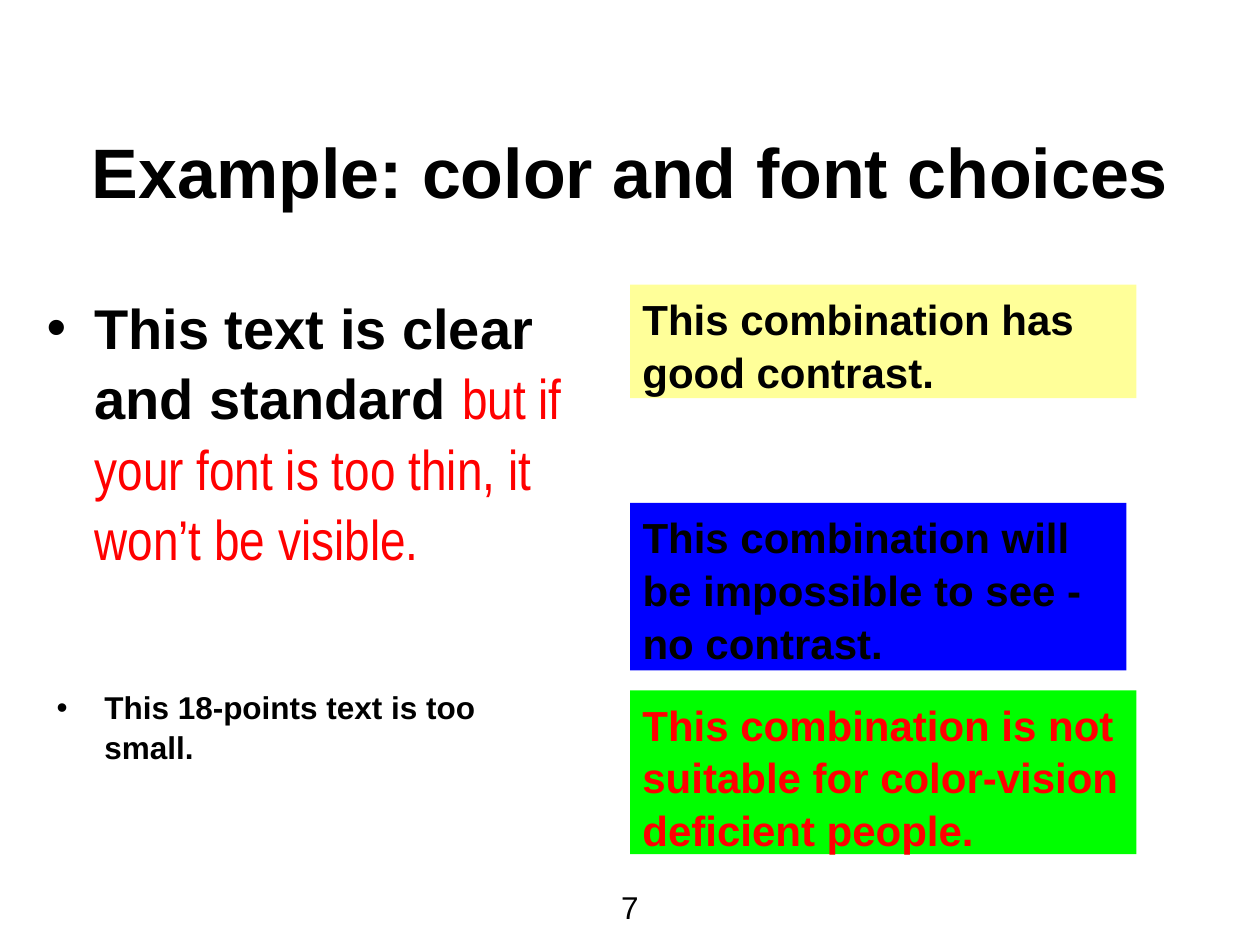
from pptx import Presentation
from pptx.dml.color import RGBColor
from pptx.enum.text import MSO_ANCHOR, MSO_AUTO_SIZE, PP_ALIGN
from pptx.util import Inches, Pt
from lxml import etree

CENTER, LEFT = PP_ALIGN.CENTER, PP_ALIGN.LEFT
TOP, MIDDLE = MSO_ANCHOR.TOP, MSO_ANCHOR.MIDDLE
NO_FIT = MSO_AUTO_SIZE.NONE
BLACK = RGBColor(0x00, 0x00, 0x00)
RED = RGBColor(0xFF, 0x00, 0x00)
BLUE = RGBColor(0x00, 0x00, 0xFF)
GREEN = RGBColor(0x00, 0xFF, 0x00)
YELLOW = RGBColor(0xFF, 0xFF, 0x99)
DRAWING = "{http://schemas.openxmlformats.org/drawingml/2006/main}"


def place(box, left, top, width, height, anchor=TOP):
    box.left, box.top = Inches(left), Inches(top)
    box.width, box.height = Inches(width), Inches(height)
    frame = box.text_frame
    frame.word_wrap = True
    frame.auto_size = NO_FIT
    frame.vertical_anchor = anchor


def write(box, text, size, color=BLACK, bold=True, align=LEFT, bullet=False):
    para = box.text_frame.paragraphs[0]
    para.text = text
    para.alignment = align
    para.space_before = Pt(0)
    para.line_spacing = 1.05
    properties = para._p.get_or_add_pPr()
    indent = Inches(0.38) if bullet else 0
    properties.set("marL", str(indent))
    properties.set("indent", str(-indent))
    if bullet:
        etree.SubElement(properties, DRAWING + "buFont", typeface="Arial")
        etree.SubElement(properties, DRAWING + "buChar", char="•")
    else:
        etree.SubElement(properties, DRAWING + "buNone")
    font = para.font
    font.name, font.size, font.bold = "Arial", Pt(size), bold
    font.color.rgb = color
    return para


deck = Presentation()
deck.slide_width, deck.slide_height = Inches(10), Inches(7.5)
page = deck.slides.add_slide(deck.slide_layouts[3])
title, clear_text, hidden_text = page.placeholders

place(title, 0, 0.92, 10, 0.83, MIDDLE)
write(title, "Example: color and font choices", 40, align=CENTER)

place(clear_text, 0.27, 2.25, 4.49, 2.52)
para = write(clear_text, "This text is clear and standard ", 32, bullet=True)
span = para.add_run()
span.text = "but if your font is too thin, it won’t be visible."
span.font.name, span.font.bold = "Arial Narrow", False
span.font.color.rgb = RED

small_text = page.shapes.add_textbox(0, 0, 0, 0)
place(small_text, 0.35, 5.4, 3.62, 0.47)
write(small_text, "This 18-points text is too small.", 18, bullet=True)

good_text = page.shapes.add_textbox(0, 0, 0, 0)
unsuitable_text = page.shapes.add_textbox(0, 0, 0, 0)
samples = [
    (good_text, 2.26, 4.02, 0.9, YELLOW, BLACK,
     "This combination has good contrast."),
    (hidden_text, 3.99, 3.94, 1.33, BLUE, BLACK,
     "This combination will be impossible to see - no contrast."),
    (unsuitable_text, 5.48, 4.02, 1.3, GREEN, RED,
     "This combination is not suitable for color-vision deficient people."),
]
for box, top, width, height, fill, color, text in samples:
    place(box, 5, top, width, height)
    box.fill.solid()
    box.fill.fore_color.rgb = fill
    write(box, text, 24, color)

page_number = page.shapes.add_textbox(0, 0, 0, 0)
place(page_number, 0.75, 6.98, 8.5, 0.35)
write(page_number, "7", 18, bold=False, align=CENTER)

deck.save("out.pptx")
